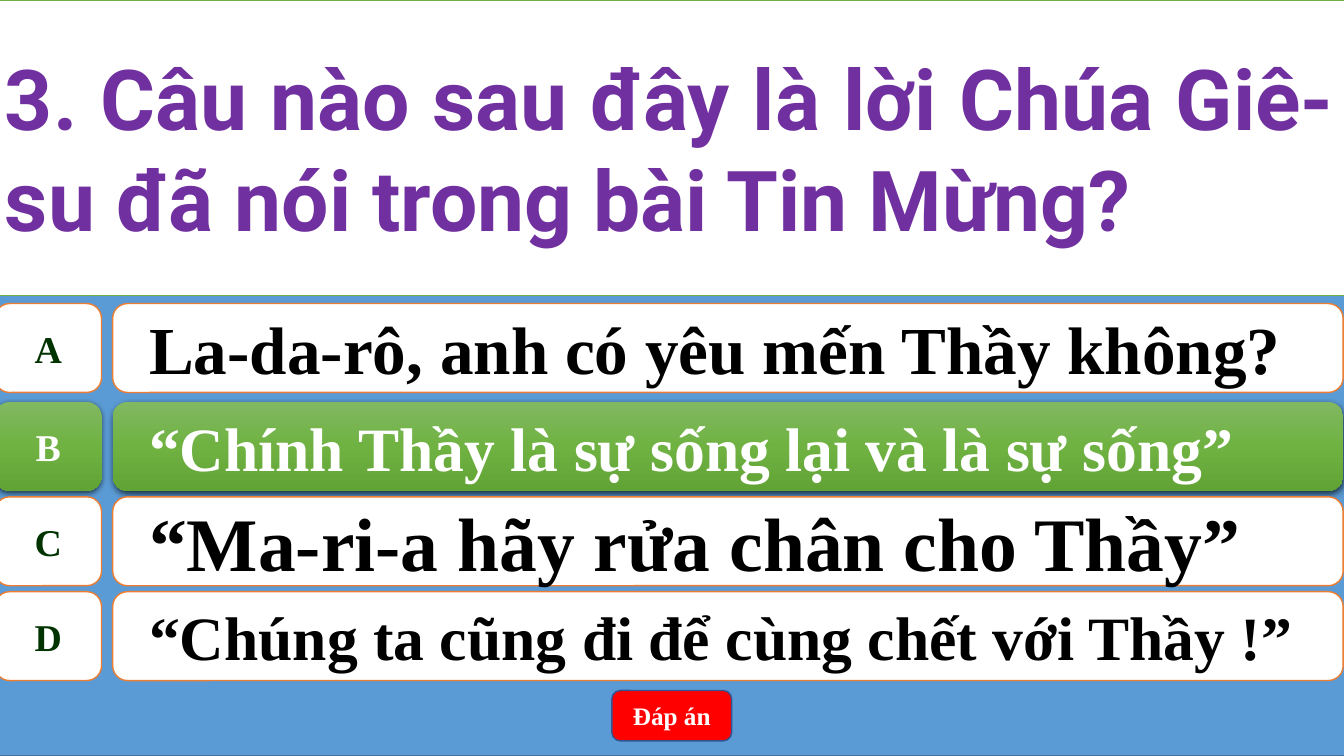
from copy import deepcopy
from dataclasses import dataclass

from lxml.etree import SubElement
from pptx import Presentation
from pptx.dml.color import RGBColor
from pptx.enum.shapes import MSO_SHAPE
from pptx.enum.text import MSO_ANCHOR, MSO_AUTO_SIZE, PP_ALIGN
from pptx.oxml.ns import qn
from pptx.shapes.autoshape import Shape
from pptx.slide import Slide
from pptx.util import Cm, Pt


@dataclass(frozen=True)
class Theme:
    serif: str = "Times New Roman"
    sans: str = "Roboto"
    white: str = "FFFFFF"
    black: str = "000000"
    sky: str = "5B9BD5"
    sky_edge: str = "43739E"
    title: str = "7030A0"
    title_edge: str = "70AD47"
    letter: str = "003300"
    answer_edge: str = "ED7D31"
    button: str = "FF0000"
    button_edge: str = "325491"
    correct: tuple[str, str, str] = ("81B861", "6FB242", "62A336")
    title_size: int = 60
    letter_size: int = 27
    button_size: int = 18


@dataclass(frozen=True)
class Box:
    left: float
    top: float
    width: float
    height: float

    def lengths(self) -> tuple[Cm, Cm, Cm, Cm]:
        return Cm(self.left), Cm(self.top), Cm(self.width), Cm(self.height)


@dataclass(frozen=True)
class Answer:
    letter: str
    text: str
    top: float
    size: int
    correct: bool = False


THEME = Theme()
SLIDE_WIDTH, SLIDE_HEIGHT = 33.87, 19.05
EDGE = -0.13
FULL_WIDTH = 34.01
ROW_HEIGHT = 2.24
QUESTION = "3. Câu nào sau đây là lời Chúa Giê-su đã nói trong bài Tin Mừng?"
ANSWERS = (
    Answer("A", "La-da-rô, anh có yêu mến Thầy không?", 7.65, 48),
    Answer("B", "“Chính Thầy là sự sống lại và là sự sống”", 10.13, 44, True),
    Answer("C", "“Ma-ri-a hãy rửa chân cho Thầy”", 12.52, 54),
    Answer("D", "“Chúng ta cũng đi để cùng chết với Thầy !”", 14.91, 44),
)


def rgb(color: str) -> RGBColor:
    return RGBColor.from_string(color)


def paint(sp: Shape, fill: str, line: str) -> None:
    sp.shadow.inherit = False
    sp.fill.solid()
    sp.fill.fore_color.rgb = rgb(fill)
    sp.line.color.rgb = rgb(line)
    sp.line.width = Pt(1)


def paint_correct(sp: Shape) -> None:
    """Give the right answer its green gradient and soft shadow."""
    sp.fill.gradient()
    sp.fill.gradient_angle = 270
    stop_list = sp._element.spPr.find(qn("a:gradFill")).find(qn("a:gsLst"))
    stop_list.insert(1, deepcopy(stop_list[0]))
    for i, (stop, color) in enumerate(zip(sp.fill.gradient_stops, THEME.correct)):
        stop.position = i / 2
        stop.color.rgb = rgb(color)
    sp.line.fill.background()
    sp.shadow.inherit = False
    effects = sp._element.spPr.find(qn("a:effectLst"))
    shadow = SubElement(effects, qn("a:outerShdw"), blurRad=str(Pt(4.5)),
                        dist=str(Pt(1.5)), dir="5400000", rotWithShape="0")
    color = SubElement(shadow, qn("a:srgbClr"), val=THEME.black)
    SubElement(color, qn("a:alpha"), val="63000")


def write(sp: Shape, text: str, size: int, color: str,
          font: str = THEME.serif, align: PP_ALIGN = PP_ALIGN.CENTER) -> None:
    tf = sp.text_frame
    tf.text = text
    tf.auto_size = MSO_AUTO_SIZE.NONE
    tf.vertical_anchor = MSO_ANCHOR.MIDDLE
    tf.word_wrap = True
    p = tf.paragraphs[0]
    p.alignment = align
    p.font.name = font
    p.font.size = Pt(size)
    p.font.bold = True
    p.font.color.rgb = rgb(color)


def add_answer(s: Slide, answer: Answer) -> None:
    letter = s.shapes.add_shape(MSO_SHAPE.FLOWCHART_ALTERNATE_PROCESS,
                                *Box(EDGE, answer.top, 2.69, ROW_HEIGHT).lengths())
    bar = s.shapes.add_shape(MSO_SHAPE.ROUNDED_RECTANGLE,
                             *Box(2.84, answer.top, 31.01, ROW_HEIGHT).lengths())
    for sp in (letter, bar):
        if answer.correct:
            paint_correct(sp)
        else:
            paint(sp, THEME.white, THEME.answer_edge)
    write(letter, answer.letter, THEME.letter_size,
          THEME.white if answer.correct else THEME.letter)
    letter.text_frame.word_wrap = False
    write(bar, answer.text, answer.size,
          THEME.white if answer.correct else THEME.black, align=PP_ALIGN.LEFT)
    p = bar.text_frame.paragraphs[0]
    p.level = 1
    p._p.get_or_add_pPr().set("marL", str(Cm(1.27)))
    p._p.get_or_add_pPr().set("indent", str(Cm(-0.71)))


def add_question(s: Slide) -> None:
    title = s.shapes.title
    title.left, title.top, title.width, title.height = Box(EDGE, 0, FULL_WIDTH, 7.44).lengths()
    paint(title, THEME.white, THEME.title_edge)
    write(title, QUESTION, THEME.title_size, THEME.title, THEME.sans, PP_ALIGN.JUSTIFY)
    s.shapes._spTree.append(title._element)


def main() -> None:
    prs = Presentation()
    prs.slide_width, prs.slide_height = Cm(SLIDE_WIDTH), Cm(SLIDE_HEIGHT)
    s = prs.slides.add_slide(prs.slide_layouts[5])

    backdrop = s.shapes.add_shape(MSO_SHAPE.RECTANGLE,
                                  *Box(EDGE, 0, FULL_WIDTH, SLIDE_HEIGHT).lengths())
    paint(backdrop, THEME.sky, THEME.sky_edge)
    for answer in ANSWERS:
        add_answer(s, answer)
    button = s.shapes.add_shape(MSO_SHAPE.ROUNDED_RECTANGLE,
                                *Box(15.42, 17.4, 3.02, 1.27).lengths())
    paint(button, THEME.button, THEME.button_edge)
    write(button, "Đáp án", THEME.button_size, THEME.white)
    add_question(s)

    prs.save("out.pptx")


if __name__ == "__main__":
    main()
